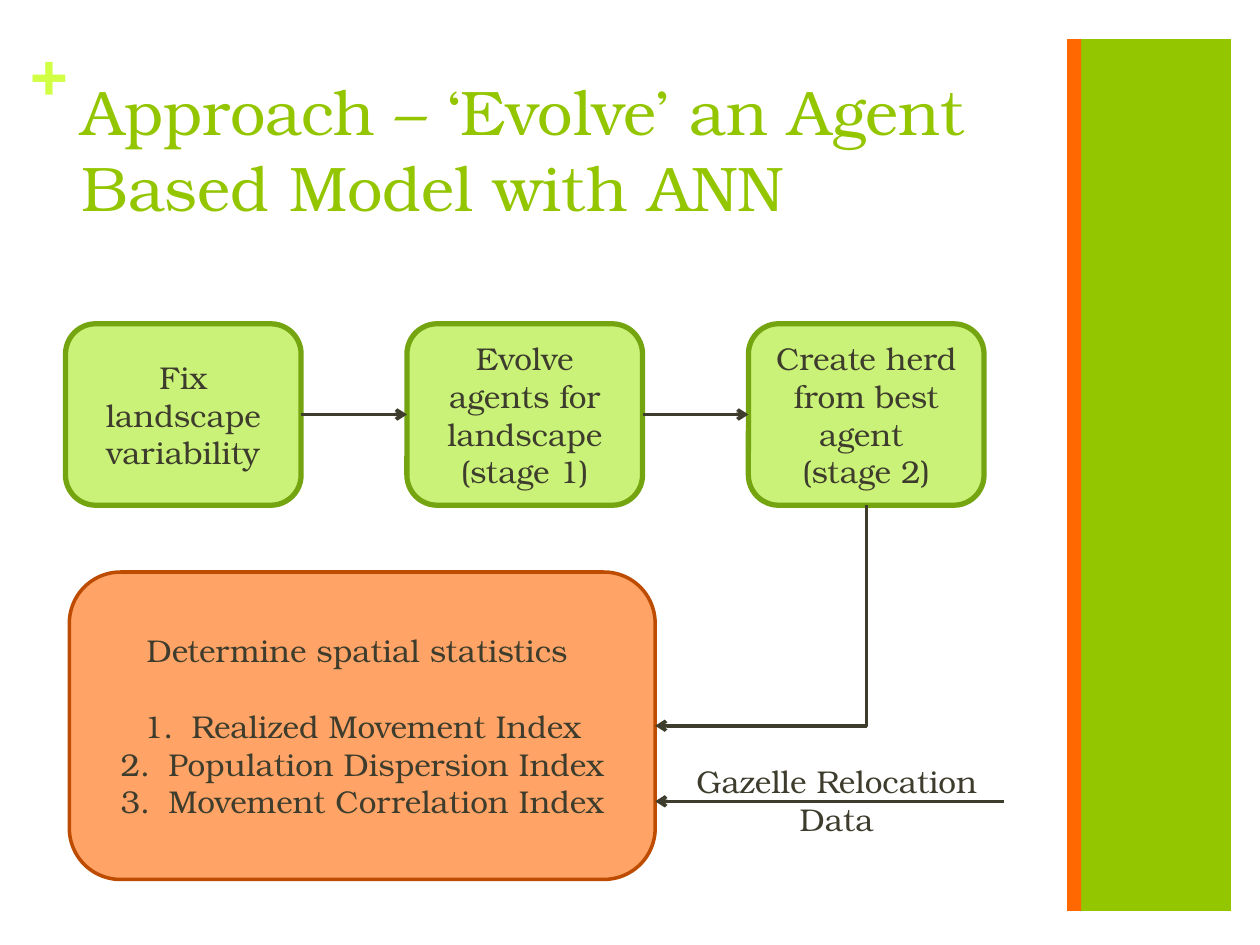
"""Builds a flow diagram slide about evolving an agent based model."""
import lxml.etree
import pptx
import pptx.dml.color
import pptx.enum.shapes
import pptx.enum.text
import pptx.oxml.ns
import pptx.util

FONT = "TeX Gyre Bonum"
GREEN, ORANGE, LIME, DARK = "94C600", "FF6700", "D0FF44", "3E3D2D"
TITLE = "Approach – ‘Evolve’ an Agent Based Model with ANN"
STEPS = [
    ["Fix landscape variability"],
    ["Evolve agents for landscape (stage 1)"],
    ["Create herd from best agent ", "(stage 2)"],
]
STATISTICS_HEADING = "Determine spatial statistics "
STATISTICS = ["Realized Movement Index", "Population Dispersion Index", "Movement Correlation Index"]
DATA_LABEL = "Gazelle Relocation Data"

BANDS = [(8.57, 1.2, GREEN), (8.47, 0.11, ORANGE)]
BAND_TOP, BAND_HEIGHT = 0.31, 6.92
STEP_LEFT, STEP_TOP, STEP_PITCH = 0.52, 2.57, 2.71
STEP_WIDTH, STEP_HEIGHT = 1.87, 1.44
STATISTICS_BOX = (0.55, 4.54, 4.65, 2.44)
HERD_ARROW_Y, DATA_ARROW_Y, DATA_ARROW_START = 5.76, 6.36, 7.97
INDENT = 0.38

inches = pptx.util.Inches
qn = pptx.oxml.ns.qn


def colour(value):
    return pptx.dml.color.RGBColor.from_string(value)


def write(shape, lines, size=18, color=DARK, bold=False, align="CENTER", anchor="TOP", inset=None):
    frame = shape.text_frame
    frame.word_wrap = True
    frame.vertical_anchor = getattr(pptx.enum.text.MSO_ANCHOR, anchor)
    if inset is not None:
        frame.margin_left = frame.margin_right = frame.margin_top = frame.margin_bottom = inches(inset)
    for index, line in enumerate(lines):
        paragraph = frame.add_paragraph() if index else frame.paragraphs[0]
        paragraph.alignment = getattr(pptx.enum.text.PP_ALIGN, align)
        run = paragraph.add_run()
        run.text = line
        run.font.name, run.font.size, run.font.bold = FONT, pptx.util.Pt(size), bold
        run.font.color.rgb = colour(color)
    return frame.paragraphs


def add_text(slide, box, lines, **text_format):
    return write(slide.shapes.add_textbox(*map(inches, box)), lines, **text_format)


def add_box(slide, kind, box, fill, line=None, width=0):
    shape = slide.shapes.add_shape(getattr(pptx.enum.shapes.MSO_SHAPE, kind), *map(inches, box))
    shape.shadow.inherit = False
    shape.fill.solid()
    shape.fill.fore_color.rgb = colour(fill)
    if line:
        shape.line.color.rgb = colour(line)
        shape.line.width = pptx.util.Pt(width)
    else:
        shape.line.fill.background()
    return shape


def add_arrow(slide, start, end, kind="STRAIGHT"):
    connector = slide.shapes.add_connector(
        getattr(pptx.enum.shapes.MSO_CONNECTOR, kind), *map(inches, start + end))
    connector.line.color.rgb = colour(DARK)
    connector.line.width = pptx.util.Pt(2)
    properties = connector._element.spPr
    lxml.etree.SubElement(properties.find(qn("a:ln")), qn("a:tailEnd"), type="arrow")
    lxml.etree.SubElement(properties, qn("a:effectLst"))
    return properties


def add_down_left_arrow(slide, start, end):
    center_x, center_y = (start[0] + end[0]) / 2, (start[1] + end[1]) / 2
    half_width, half_height = (end[1] - start[1]) / 2, (start[0] - end[0]) / 2
    properties = add_arrow(slide, (center_x - half_width, center_y - half_height),
                           (center_x + half_width, center_y + half_height), "ELBOW")
    properties.find(qn("a:xfrm")).set("rot", "5400000")
    properties.find(qn("a:prstGeom")).set("prst", "bentConnector2")


def number(paragraph):
    properties = paragraph._p.get_or_add_pPr()
    properties.set("marL", str(inches(INDENT)))
    properties.set("indent", str(-inches(INDENT)))
    lxml.etree.SubElement(properties, qn("a:buFont"), typeface="+mj-lt")
    lxml.etree.SubElement(properties, qn("a:buAutoNum"), type="arabicPeriod")


def main():
    presentation = pptx.Presentation()
    presentation.slide_width, presentation.slide_height = inches(10), inches(7.5)
    slide = presentation.slides.add_slide(presentation.slide_layouts[6])

    for left, width, fill in BANDS:
        add_box(slide, "RECTANGLE", (left, BAND_TOP, width, BAND_HEIGHT), fill)
    add_text(slide, (0.24, 0.25, 0.29, 0.61), ["+"], size=36, color=LIME, bold=True,
             align="LEFT", inset=0)
    add_text(slide, (0.55, 0.53, 8.26, 1.22), [TITLE], size=36, color=GREEN, align="LEFT")

    lefts = [STEP_LEFT + index * STEP_PITCH for index in range(len(STEPS))]
    for left, lines in zip(lefts, STEPS):
        box = (left, STEP_TOP, STEP_WIDTH, STEP_HEIGHT)
        write(add_box(slide, "ROUNDED_RECTANGLE", box, "CAF278", "74A510", 3), lines, anchor="MIDDLE")
    middle = STEP_TOP + STEP_HEIGHT / 2
    for left, following in zip(lefts, lefts[1:]):
        add_arrow(slide, (left + STEP_WIDTH, middle), (following, middle))

    statistics = add_box(slide, "ROUNDED_RECTANGLE", STATISTICS_BOX, "FFA466", "BD4C00", 2)
    paragraphs = write(statistics, [STATISTICS_HEADING] + STATISTICS, anchor="MIDDLE")
    paragraphs[0].space_after = pptx.util.Pt(21.6)
    for paragraph in paragraphs[1:]:
        number(paragraph)

    right = STATISTICS_BOX[0] + STATISTICS_BOX[2]
    add_down_left_arrow(slide, (lefts[-1] + STEP_WIDTH / 2, STEP_TOP + STEP_HEIGHT),
                        (right, HERD_ARROW_Y))
    add_arrow(slide, (DATA_ARROW_START, DATA_ARROW_Y), (right, DATA_ARROW_Y))
    add_text(slide, (5.29, 6, 2.7, 0.71), [DATA_LABEL])
    presentation.save("out.pptx")


if __name__ == "__main__":
    main()
